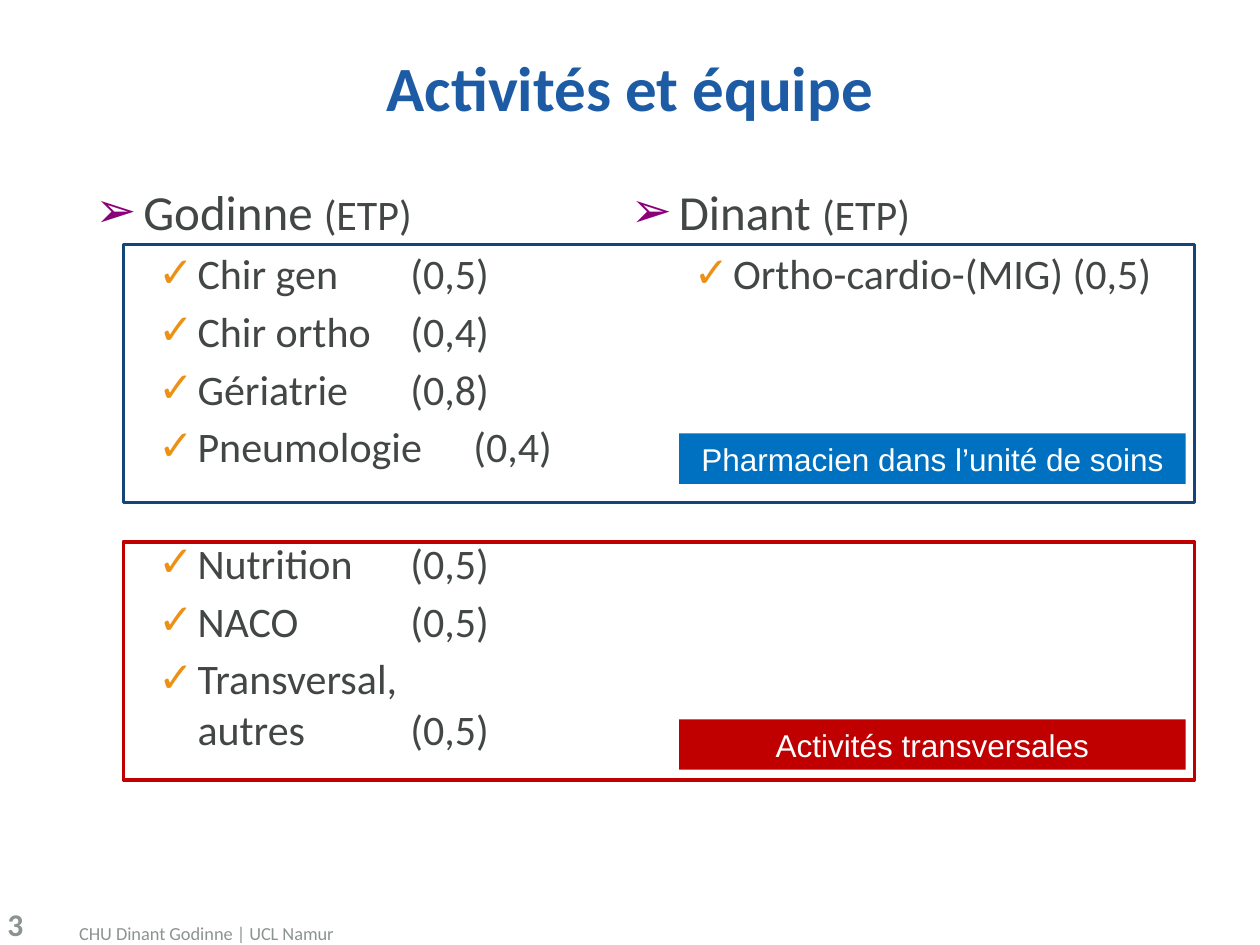
from dataclasses import dataclass

from lxml.etree import SubElement
from pptx import Presentation
from pptx.dml.color import RGBColor
from pptx.enum.shapes import MSO_SHAPE
from pptx.enum.text import MSO_ANCHOR, PP_ALIGN
from pptx.oxml.ns import qn
from pptx.util import Inches, Pt


@dataclass(frozen=True)
class Theme:
    """Colours, fonts and type sizes of the slide."""
    title: str = "1D5CA5"
    text: str = "424745"
    muted: str = "8B9390"
    arrow: str = "8A0079"
    check: str = "EC9016"
    navy: str = "15447A"
    blue: str = "0070C0"
    red: str = "C00000"
    white: str = "FFFFFF"
    font: str = "Calibri"
    sans: str = "Arial"
    big: float = 36
    head: float = 28
    body: float = 24
    label: float = 18
    small: float = 10.5
    gap: float = 4.2
    skip: float = 37.8


THEME = Theme()
UNITS = ["Chir gen\t\t(0,5)", "Chir ortho\t(0,4)", "Gériatrie\t(0,8)", "Pneumologie \t(0,4)"]
SHARED = ["Nutrition\t(0,5)", "NACO \t\t(0,5)", "Transversal,\nautres \t\t(0,5)"]
DINANT = ["Ortho-cardio-(MIG) (0,5)"]


def add_run(para, text, size, color, font=THEME.font, bold=False):
    """Add one formatted run to a paragraph."""
    run = para.add_run()
    run.text = text
    run.font.name = font
    run.font.size = Pt(size)
    run.font.bold = bold
    run.font.color.rgb = RGBColor.from_string(color)


def add_box(slide, left, top, width, height, wrap=True):
    """Add a text box and return its text frame."""
    box = slide.shapes.add_textbox(Inches(left), Inches(top), Inches(width), Inches(height))
    box.text_frame.word_wrap = wrap
    return box.text_frame


def set_bullet(para, char, color, left, hang):
    """Give a paragraph a coloured bullet with a hanging indent."""
    props = para._p.get_or_add_pPr()
    props.set("marL", str(Inches(left)))
    props.set("indent", str(-Inches(hang)))
    tint = SubElement(props, qn("a:buClr"))
    SubElement(tint, qn("a:srgbClr"), val=color)
    SubElement(props, qn("a:buFont"), typeface=THEME.sans)
    SubElement(props, qn("a:buChar"), char=char)


def add_item(frame, text, gap):
    """Add a checked item, breaking lines where the text does."""
    para = frame.add_paragraph()
    para.level = 1
    set_bullet(para, "✓", THEME.check, 0.81, 0.31)
    para.space_before = Pt(gap)
    for num, line in enumerate(text.split("\n")):
        if num:
            para.add_line_break()
        add_run(para, line, THEME.body, THEME.text)


def add_list(slide, site, groups, left, width, height):
    """Add a site heading followed by spaced groups of items."""
    frame = add_box(slide, left, 1.39, width, height)
    para = frame.paragraphs[0]
    set_bullet(para, "➢", THEME.arrow, 0.38, 0.38)
    add_run(para, site + " ", THEME.head, THEME.text)
    add_run(para, "(ETP)", THEME.body, THEME.text)
    for part, items in enumerate(groups):
        for num, text in enumerate(items):
            add_item(frame, text, THEME.skip if part and not num else THEME.gap)


def add_rect(group, left, top, width, height):
    """Add a flat rectangle to a group."""
    rect = group.shapes.add_shape(
        MSO_SHAPE.RECTANGLE, Inches(left), Inches(top), Inches(width), Inches(height))
    rect.shadow.inherit = False
    return rect


def add_zone(slide, top, height, line, fill, tag_top, text):
    """Add an outlined zone with its filled label."""
    group = slide.shapes.add_group_shape()
    zone = add_rect(group, 0.98, top, 8.5, height)
    zone.fill.background()
    zone.line.color.rgb = RGBColor.from_string(line)
    zone.line.width = Pt(2)
    tag = add_rect(group, 5.39, tag_top, 4.02, 0.4)
    tag.fill.solid()
    tag.fill.fore_color.rgb = RGBColor.from_string(fill)
    tag.line.fill.background()
    tag.text_frame.word_wrap = True
    para = tag.text_frame.paragraphs[0]
    para.alignment = PP_ALIGN.CENTER
    add_run(para, text, THEME.label, THEME.white, THEME.sans)


def add_title(slide, text):
    """Place and format the title."""
    title = slide.shapes.title
    title.left, title.top = Inches(0.5), Inches(0.29)
    title.width, title.height = Inches(9), Inches(0.79)
    title.text_frame.vertical_anchor = MSO_ANCHOR.MIDDLE
    para = title.text_frame.paragraphs[0]
    para.alignment = PP_ALIGN.CENTER
    add_run(para, text, THEME.big, THEME.title, bold=True)


def add_footer(slide):
    """Add the footer line and the slide number."""
    foot = add_box(slide, 0.53, 7.27, 2.25, 0.28, wrap=False)
    add_run(foot.paragraphs[0], "CHU Dinant Godinne | UCL Namur", THEME.small, THEME.muted)
    page = add_box(slide, -0.04, 7.13, 0.55, 0.4)
    page.vertical_anchor = MSO_ANCHOR.MIDDLE
    add_run(page.paragraphs[0], "3", THEME.label, THEME.muted, bold=True)


def main():
    """Build and save the slide."""
    deck = Presentation()
    deck.slide_width, deck.slide_height = Inches(10), Inches(7.5)
    slide = deck.slides.add_slide(deck.slide_layouts[5])
    add_title(slide, "Activités et équipe")
    add_list(slide, "Godinne", [UNITS, SHARED], 0.66, 4.26, 4.41)
    add_list(slide, "Dinant", [DINANT], 4.91, 4.34, 1.42)
    add_zone(slide, 1.94, 2.05, THEME.navy, THEME.blue, 3.44, "Pharmacien dans l’unité de soins")
    add_zone(slide, 4.3, 1.89, THEME.red, THEME.red, 5.71, "Activités transversales")
    add_footer(slide)
    deck.save("out.pptx")


if __name__ == "__main__":
    main()
